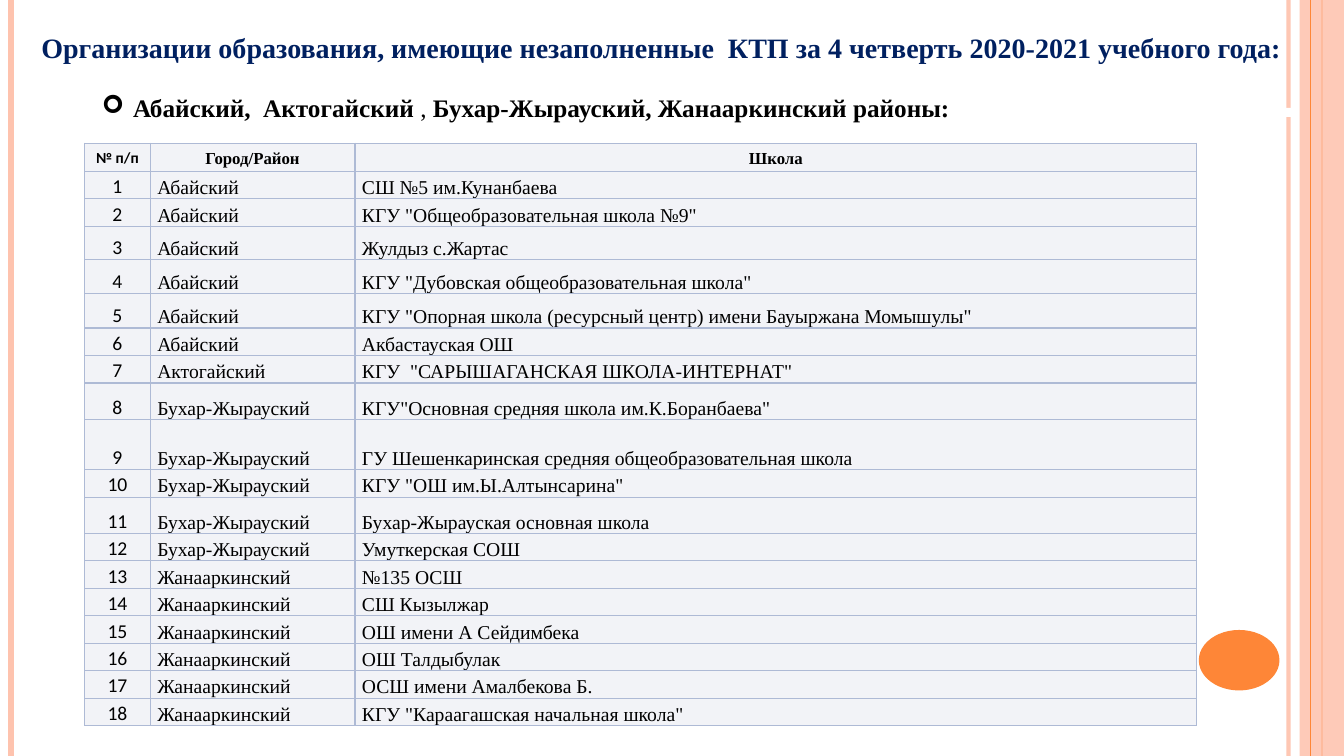
from lxml.etree import SubElement
from pptx import Presentation
from pptx.dml.color import RGBColor
from pptx.enum.shapes import MSO_CONNECTOR, MSO_SHAPE
from pptx.enum.text import MSO_ANCHOR, MSO_AUTO_SIZE, PP_ALIGN
from pptx.oxml.ns import qn
from pptx.util import Inches, Pt

COLORS = {
    "peach": "FEC3AE",
    "orange": "FE8637",
    "white": "FFFFFF",
    "navy": "002060",
    "black": "000000",
    "cell": "F2F3F7",
    "border": "AEBAD5",
}
SERIF, SANS = "Times New Roman", "Calibri"

HEADERS = ["№ п/п", "Город/Район", "Школа"]
SCHOOLS = {
    "Абайский": [
        "СШ №5 им.Кунанбаева",
        'КГУ "Общеобразовательная школа №9"',
        "Жулдыз с.Жартас",
        'КГУ "Дубовская общеобразовательная школа"',
        'КГУ "Опорная школа (ресурсный центр) имени Бауыржана Момышулы"',
        "Акбастауская ОШ",
    ],
    "Актогайский": ['КГУ  "САРЫШАГАНСКАЯ ШКОЛА-ИНТЕРНАТ"'],
    "Бухар-Жырауский": [
        'КГУ"Основная средняя школа им.К.Боранбаева"',
        "ГУ Шешенкаринская средняя общеобразовательная школа",
        'КГУ "ОШ им.Ы.Алтынсарина"',
        "Бухар-Жырауская основная школа",
        "Умуткерская СОШ",
    ],
    "Жанааркинский": [
        "№135 ОСШ",
        "СШ Кызылжар",
        "ОШ имени А Сейдимбека",
        "ОШ Талдыбулак",
        "ОСШ имени Амалбекова Б.",
        'КГУ "Караагашская начальная школа"',
    ],
}
COLUMN_WIDTHS = [0.65, 2.03, 8.35]
ROW_HEIGHT = 0.27
TALL_ROWS = {0: 0.28, 3: 0.33, 4: 0.34, 5: 0.34, 8: 0.36, 9: 0.5, 11: 0.36}


def rgb(name):
    return RGBColor.from_string(COLORS[name])


def set_alpha(element, percent):
    """Make the solid colour inside an element partly transparent."""
    color = next(element.iter(qn("a:srgbClr")))
    SubElement(color, qn("a:alpha"), val=str(percent * 1000))


class SlideBuilder:
    def __init__(self, slide):
        self.slide = slide
        self.shapes = slide.shapes

    def set_font(self, font, size, name=SERIF, bold=False, color="black"):
        font.size, font.name, font.bold = Pt(size), name, bold
        font.color.rgb = rgb(color)

    def vertical_line(self, x, color, width, alpha=100):
        line = self.shapes.add_connector(
            MSO_CONNECTOR.STRAIGHT, Inches(x), 0, Inches(x), Inches(7.5))
        line.line.color.rgb = rgb(color)
        line.line.width = Pt(width)
        properties = line.element.spPr
        if alpha < 100:
            set_alpha(properties, alpha)
        SubElement(properties, qn("a:effectLst"))

    def shape(self, kind, box, color, alpha=100):
        sp = self.shapes.add_shape(kind, *map(Inches, box))
        sp.shadow.inherit = False
        sp.fill.solid()
        sp.fill.fore_color.rgb = rgb(color)
        sp.line.fill.background()
        if alpha < 100:
            set_alpha(sp.element.spPr, alpha)

    def placeholder(self, index, box, wrap=True):
        """Place a placeholder in front and return its first paragraph."""
        sp = self.slide.placeholders[index]
        sp.left, sp.top, sp.width, sp.height = map(Inches, box)
        self.shapes.element.append(sp.element)
        tf = sp.text_frame
        tf.word_wrap = wrap
        tf.auto_size = MSO_AUTO_SIZE.SHAPE_TO_FIT_TEXT
        tf.vertical_anchor = MSO_ANCHOR.TOP
        p = tf.paragraphs[0]
        p.space_before = Pt(0)
        return p

    def title(self, text, box):
        p = self.placeholder(0, box)
        p.text = text
        p.alignment = PP_ALIGN.CENTER
        self.set_font(p.font, 20, bold=True, color="navy")

    def bullet(self, runs, box):
        p = self.placeholder(1, box, wrap=False)
        p.alignment = PP_ALIGN.LEFT
        for text, bold in runs:
            r = p.add_run()
            r.text = text
            self.set_font(r.font, 18, bold=bold)
        properties = p._p.get_or_add_pPr()
        indent = Inches(0.31)
        properties.set("marL", str(indent))
        properties.set("indent", str(-indent))
        SubElement(properties, qn("a:buFont"), typeface="Wingdings")
        SubElement(properties, qn("a:buChar"), char="➢")

    def cell_border(self, cell):
        properties = cell._tc.get_or_add_tcPr()
        for side in "LRTB":
            line = SubElement(properties, qn(f"a:ln{side}"), w=str(Pt(1)))
            fill = SubElement(line, qn("a:solidFill"))
            SubElement(fill, qn("a:srgbClr"), val=COLORS["border"])

    def cell(self, cell, text, row, column):
        header = row == 0
        self.cell_border(cell)
        cell.fill.solid()
        cell.fill.fore_color.rgb = rgb("cell")
        cell.margin_left = cell.margin_right = Inches(0.07)
        cell.margin_top = cell.margin_bottom = 0
        cell.vertical_anchor = MSO_ANCHOR.MIDDLE if header else MSO_ANCHOR.BOTTOM
        p = cell.text_frame.paragraphs[0]
        p.text = text
        p.line_spacing = 1.15
        p.alignment = PP_ALIGN.CENTER if header or column == 0 else PP_ALIGN.LEFT
        size = (11 if column == 0 else 12) if header else 14
        self.set_font(p.font, size, SANS if column == 0 else SERIF, header)

    def table(self, rows, left, top):
        heights = [TALL_ROWS.get(i, ROW_HEIGHT) for i in range(len(rows))]
        table = self.shapes.add_table(
            len(rows), len(COLUMN_WIDTHS), Inches(left), Inches(top),
            Inches(sum(COLUMN_WIDTHS)), Inches(sum(heights))).table
        table.first_row = table.horz_banding = False
        for column, width in zip(table.columns, COLUMN_WIDTHS):
            column.width = Inches(width)
        for i, (height, texts) in enumerate(zip(heights, rows)):
            table.rows[i].height = Inches(height)
            for j, text in enumerate(texts):
                self.cell(table.cell(i, j), text, i, j)


def main():
    prs = Presentation()
    prs.slide_width, prs.slide_height = Inches(13.33), Inches(7.5)
    builder = SlideBuilder(prs.slides.add_slide(prs.slide_layouts[1]))

    builder.vertical_line(12.78, "peach", 3, alpha=93)
    builder.vertical_line(0.11, "peach", 4.5)
    builder.vertical_line(13.11, "orange", 1.5)
    builder.shape(MSO_SHAPE.RECTANGLE, (12.89, 0, 0.44, 7.5), "peach", alpha=87)
    builder.vertical_line(13, "orange", 0.75)
    builder.shape(MSO_SHAPE.OVAL, (11.89, 6.25, 0.8, 0.6), "orange")

    pairs = [(area, school) for area, names in SCHOOLS.items() for school in names]
    rows = [(str(n), *pair) for n, pair in enumerate(pairs, 1)]
    builder.table([HEADERS, *rows], 0.84, 1.42)

    builder.shape(MSO_SHAPE.RECTANGLE, (0.26, 1.07, 12.6, 0.09), "white")
    builder.title(
        "Организации образования, имеющие незаполненные  КТП "
        "за 4 четверть 2020-2021 учебного года:", (0.26, 0.25, 12.6, 0.44))
    builder.bullet(
        [("Абайский,  Актогайский", True), (" , ", False),
         ("Бухар-Жырауский, Жанааркинский районы:", True)],
        (0.91, 0.87, 8.71, 0.4))
    prs.save("out.pptx")


if __name__ == "__main__":
    main()
